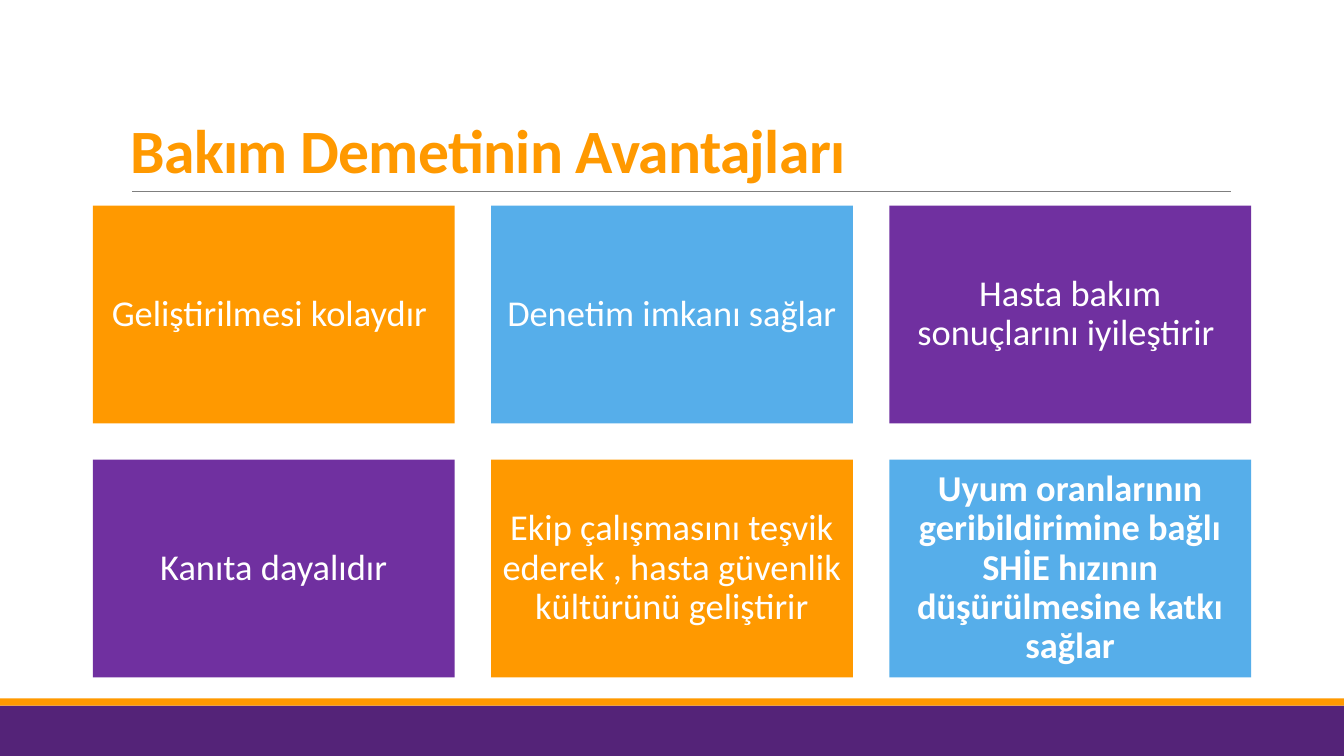
from dataclasses import dataclass

from lxml.etree import SubElement
from pptx import Presentation
from pptx.dml.color import RGBColor
from pptx.enum.shapes import MSO_CONNECTOR, MSO_SHAPE
from pptx.enum.text import MSO_ANCHOR, PP_ALIGN
from pptx.oxml.ns import qn
from pptx.util import Inches, Pt


@dataclass(frozen=True)
class Theme:
    font: str = "Calibri"
    orange: str = "FF9900"
    blue: str = "56AEEA"
    purple: str = "7030A0"
    dark_purple: str = "542378"
    grey: str = "7F7F7F"
    white: str = "FFFFFF"
    title_size: int = 44
    card_size: int = 26


def write_text(frame, text, *, theme, size, color, bold=False, align=PP_ALIGN.LEFT,
               anchor=MSO_ANCHOR.MIDDLE, line_spacing=0.9, margins=(0.11, 0.11),
               tracking=None):
    """Fill a text frame; margins are (side, top and bottom) in inches, tracking is in points."""
    frame.word_wrap = True
    frame.vertical_anchor = anchor
    frame.margin_left = frame.margin_right = Inches(margins[0])
    frame.margin_top = frame.margin_bottom = Inches(margins[1])
    paragraph = frame.paragraphs[0]
    paragraph.alignment = align
    paragraph.line_spacing = line_spacing
    run = paragraph.add_run()
    run.text = text
    run.font.name = theme.font
    run.font.size = Pt(size)
    run.font.bold = bold
    run.font.color.rgb = RGBColor.from_string(color)
    if tracking is not None:
        run.font._element.set("spc", str(round(tracking * 100)))


class SlideBuilder:
    def __init__(self, slide, theme):
        self.slide = slide
        self.theme = theme

    def rectangle(self, left, top, width, height, fill):
        shape = self.slide.shapes.add_shape(
            MSO_SHAPE.RECTANGLE, Inches(left), Inches(top), Inches(width), Inches(height))
        shape.shadow.inherit = False
        shape.fill.solid()
        shape.fill.fore_color.rgb = RGBColor.from_string(fill)
        shape.line.fill.background()
        return shape

    def rule(self, left, right, top):
        connector = self.slide.shapes.add_connector(
            MSO_CONNECTOR.STRAIGHT, Inches(left), Inches(top), Inches(right), Inches(top))
        connector.line.color.rgb = RGBColor.from_string(self.theme.grey)
        connector.line.width = Pt(0.75)
        SubElement(connector._element.spPr, qn("a:effectLst"))

    def title(self, text, left, top, width, height):
        box = self.slide.shapes.add_textbox(
            Inches(left), Inches(top), Inches(width), Inches(height))
        write_text(box.text_frame, text, theme=self.theme, size=self.theme.title_size,
                   color=self.theme.orange, bold=True, anchor=MSO_ANCHOR.BOTTOM,
                   line_spacing=0.85, margins=(0.1, 0.05), tracking=-0.5)

    def card(self, text, left, top, width, height, fill, bold=False):
        shape = self.rectangle(left, top, width, height, fill)
        write_text(shape.text_frame, text, theme=self.theme, size=self.theme.card_size,
                   color=self.theme.white, bold=bold, align=PP_ALIGN.CENTER)


def main():
    theme = Theme()
    presentation = Presentation()
    presentation.slide_width = Inches(13.33)
    presentation.slide_height = Inches(7.5)
    slide = presentation.slides.add_slide(presentation.slide_layouts[6])
    builder = SlideBuilder(slide, theme)

    builder.rectangle(0, 7, 13.33, 0.5, theme.dark_purple)
    builder.rectangle(0, 6.93, 13.33, 0.07, theme.orange)
    builder.rule(1.31, 12.21, 1.9)
    builder.title("Bakım Demetinin Avantajları", 1.2, 0.31, 11, 1.59)

    advantages = [
        ("Geliştirilmesi kolaydır ", theme.orange, False),
        ("Denetim imkanı sağlar", theme.blue, False),
        ("Hasta bakım sonuçlarını iyileştirir ", theme.purple, False),
        ("Kanıta dayalıdır", theme.purple, False),
        ("Ekip çalışmasını teşvik ederek , hasta güvenlik kültürünü geliştirir",
         theme.orange, False),
        ("Uyum oranlarının geribildirimine bağlı SHİE hızının düşürülmesine katkı sağlar",
         theme.blue, True),
    ]
    columns, card_width, card_height, gap = 3, 3.59, 2.16, 0.36
    for index, (text, fill, bold) in enumerate(advantages):
        row, column = divmod(index, columns)
        builder.card(text, 0.92 + column * (card_width + gap),
                     2.04 + row * (card_height + gap),
                     card_width, card_height, fill, bold)

    presentation.save("out.pptx")


if __name__ == "__main__":
    main()
